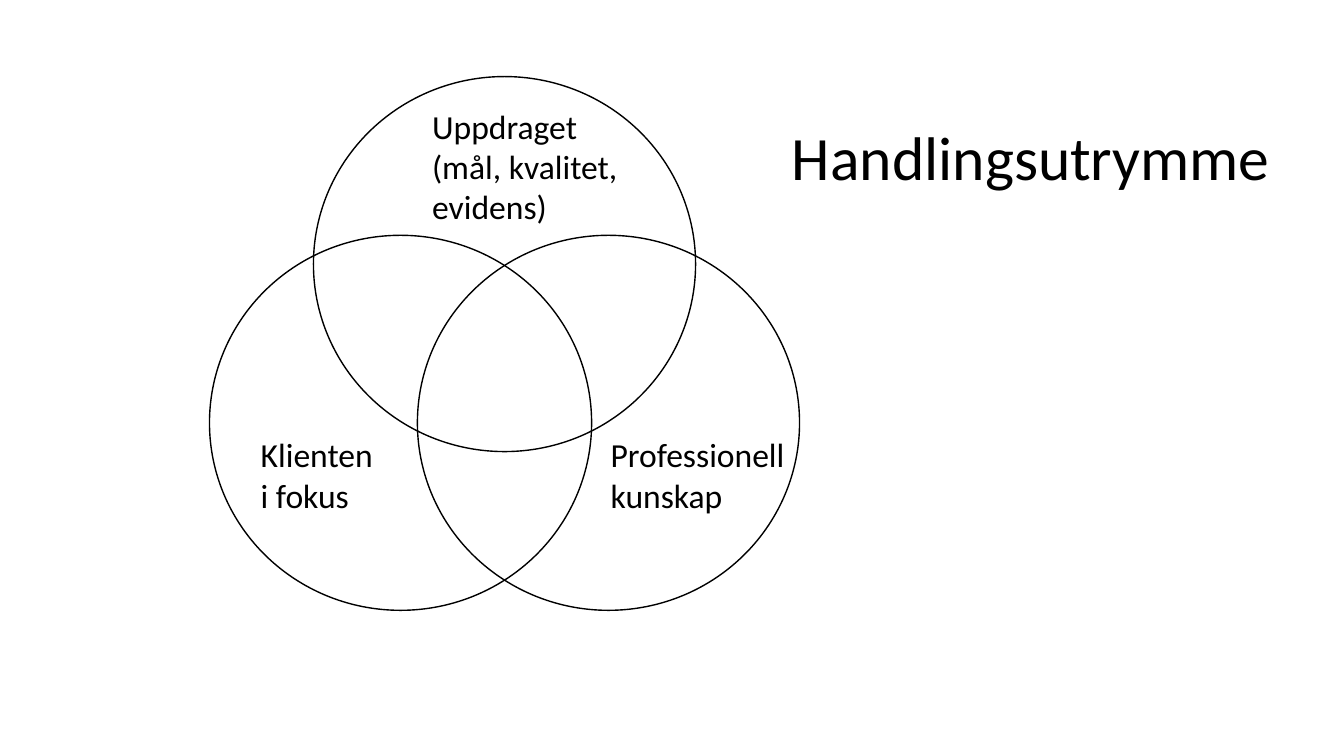
from dataclasses import dataclass

from pptx import Presentation
from pptx.dml.color import RGBColor
from pptx.enum.shapes import MSO_SHAPE
from pptx.enum.text import MSO_ANCHOR, PP_ALIGN
from pptx.util import Cm, Pt

OVAL = MSO_SHAPE.OVAL
TOP = MSO_ANCHOR.TOP
LEFT = PP_ALIGN.LEFT

# Content: lines of text, then left, top, width, height in cm
TITLE = (["Handlingsutrymme"], (19.71, 2.87, 13.39, 2.13))
LABELS = [
    (["Uppdraget", "(mål, kvalitet,", "evidens)"], (10.64, 2.54, 5.46, 4.11)),
    (["Klienten", "i fokus"], (6.32, 10.82, 3.56, 2.31)),
    (["Professionell", "kunskap"], (15.14, 10.82, 5.13, 2.31)),
]

# Venn geometry in cm: the top circle sits midway between the lower two
CIRCLE_WIDTH, CIRCLE_HEIGHT = 9.63, 9.45
VENN_LEFT, VENN_TOP = 5.28, 1.93
HALF_STEP, DROP = 2.62, 4.0
CIRCLE_OFFSETS = [(0, DROP), (2 * HALF_STEP, DROP), (HALF_STEP, 0)]


@dataclass(frozen=True)
class Theme:
    font: str = "Calibri"
    ink: RGBColor = RGBColor(0, 0, 0)
    title_size: Pt = Pt(44)
    label_size: Pt = Pt(24)
    line_width: Pt = Pt(1)


THEME = Theme()


def add_circle(slide, across, down):
    circle = slide.shapes.add_shape(
        OVAL, Cm(VENN_LEFT + across), Cm(VENN_TOP + down),
        Cm(CIRCLE_WIDTH), Cm(CIRCLE_HEIGHT))
    circle.shadow.inherit = False
    circle.fill.background()
    circle.line.color.rgb = THEME.ink
    circle.line.width = THEME.line_width


def add_text(slide, lines, box, size, wrap):
    frame = slide.shapes.add_textbox(*map(Cm, box)).text_frame
    frame.word_wrap = wrap
    frame.vertical_anchor = TOP
    frame.text = "\n".join(lines)
    for paragraph in frame.paragraphs:
        paragraph.alignment = LEFT
        paragraph.font.name = THEME.font
        paragraph.font.size = size
        paragraph.font.color.rgb = THEME.ink


def main():
    presentation = Presentation()
    presentation.slide_width, presentation.slide_height = Cm(33.87), Cm(19.05)
    slide = presentation.slides.add_slide(presentation.slide_layouts[6])

    # Overlapping circles
    for across, down in CIRCLE_OFFSETS:
        add_circle(slide, across, down)

    # Circle labels and title
    for lines, box in LABELS:
        add_text(slide, lines, box, THEME.label_size, wrap=False)
    add_text(slide, *TITLE, THEME.title_size, wrap=True)

    presentation.save("out.pptx")


if __name__ == "__main__":
    main()
